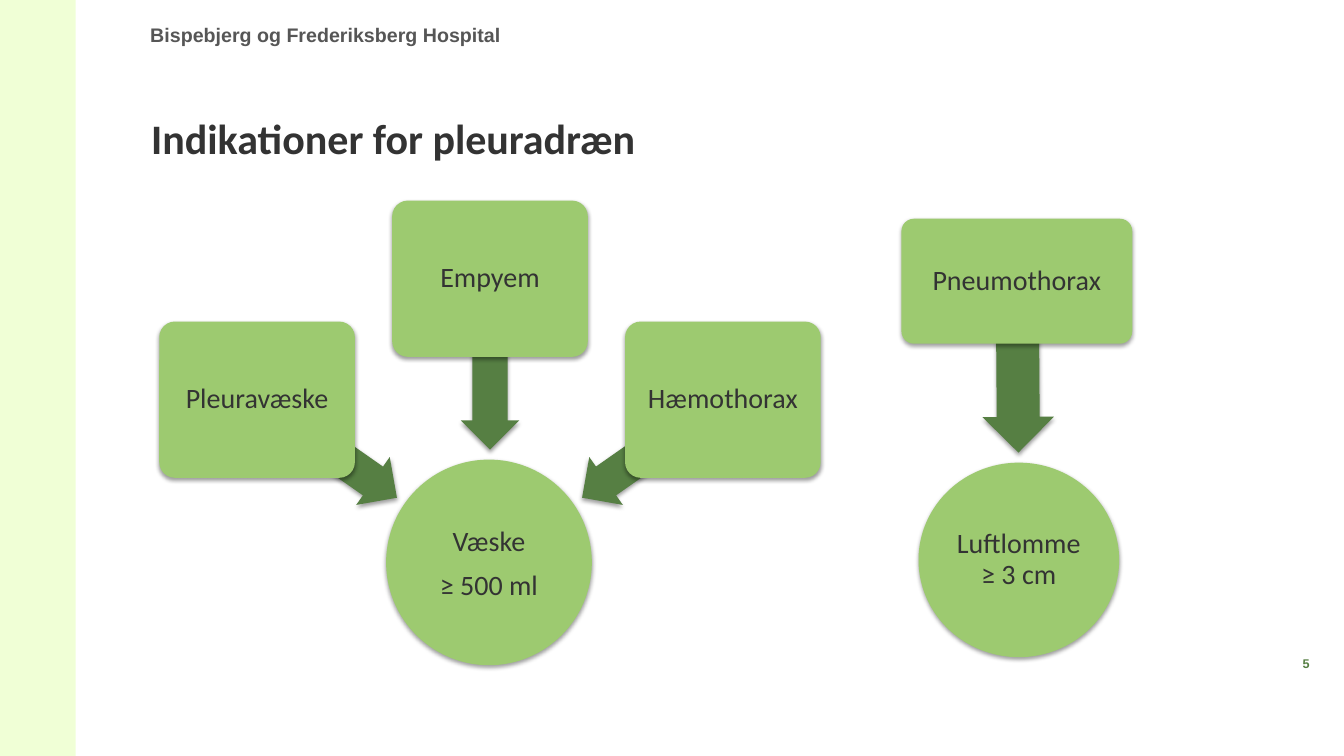
from dataclasses import dataclass

from lxml import etree
from pptx import Presentation
from pptx.dml.color import RGBColor
from pptx.enum.shapes import MSO_SHAPE
from pptx.enum.text import MSO_ANCHOR, PP_ALIGN
from pptx.oxml.ns import qn
from pptx.util import Inches, Pt

RECT, OVAL = MSO_SHAPE.RECTANGLE, MSO_SHAPE.OVAL
ROUNDED, ARROW = MSO_SHAPE.ROUNDED_RECTANGLE, MSO_SHAPE.LEFT_ARROW
LEFT, CENTER = PP_ALIGN.LEFT, PP_ALIGN.CENTER
TOP, MIDDLE, BOTTOM = MSO_ANCHOR.TOP, MSO_ANCHOR.MIDDLE, MSO_ANCHOR.BOTTOM

PALE_GREEN = RGBColor(0xF0, 0xFF, 0xD6)
GREEN = RGBColor(0x9D, 0xCA, 0x70)
DARK_GREEN = RGBColor(0x56, 0x7F, 0x43)
INK = RGBColor(0x33, 0x33, 0x33)
GRAY = RGBColor(0x56, 0x56, 0x56)


@dataclass
class Arrow:
    left: float
    top: float
    width: float
    height: float
    rotation: float


@dataclass
class Cause:
    text: str
    left: float
    top: float
    width: float
    height: float
    arrow: Arrow


@dataclass
class Threshold:
    lines: list[str]
    left: float
    top: float
    width: float
    height: float
    line_spacing: float
    causes: list[Cause]


THRESHOLDS = [
    Threshold(["Væske", "≥ 500 ml"], 3.83, 4.56, 2.04, 2.04, 1.0, [
        Cause("Pleuravæske", 1.58, 3.19, 1.94, 1.55, Arrow(2.39, 4.16, 1.7, 0.58, 215)),
        Cause("Empyem", 3.89, 1.99, 1.94, 1.55, Arrow(4.01, 3.32, 1.7, 0.58, 270)),
        Cause("Hæmothorax", 6.2, 3.19, 1.94, 1.55, Arrow(5.62, 4.16, 1.7, 0.58, 325)),
    ]),
    Threshold(["Luftlomme ≥ 3 cm"], 9.11, 4.59, 1.99, 1.93, 0.9, [
        Cause("Pneumothorax", 8.94, 2.17, 2.29, 1.24, Arrow(9.24, 3.28, 1.71, 0.71, 269.6)),
    ]),
]


def add_shadow(sp) -> None:
    """Soft shadow straight below the shape."""
    effects = sp._element.spPr.find(qn("a:effectLst"))
    shadow = etree.SubElement(effects, qn("a:outerShdw"), blurRad=str(Pt(3.1)),
                              dist=str(Pt(1.6)), dir="5400000", rotWithShape="0")
    color = etree.SubElement(shadow, qn("a:srgbClr"), val="000000")
    etree.SubElement(color, qn("a:alpha"), val="38000")


def add_figure(s, kind, left: float, top: float, width: float, height: float,
               fill: RGBColor, shadow: bool = True):
    sp = s.shapes.add_shape(kind, Inches(left), Inches(top), Inches(width), Inches(height))
    sp.shadow.inherit = False
    sp.fill.solid()
    sp.fill.fore_color.rgb = fill
    sp.line.fill.background()
    if shadow:
        add_shadow(sp)
    return sp


def write(sp, lines: list[str], *, size: float = 20, font: str = "Calibri",
          color: RGBColor = INK, bold: bool = False, align=CENTER, anchor=MIDDLE,
          inset: float = 0, line_spacing: float = 1.0, gap: float = 0) -> None:
    tf = sp.text_frame
    tf.word_wrap = True
    tf.vertical_anchor = anchor
    tf.margin_left = tf.margin_right = tf.margin_top = tf.margin_bottom = Inches(inset)
    for i, line in enumerate(lines):
        p = tf.paragraphs[0] if i == 0 else tf.add_paragraph()
        p.alignment = align
        p.line_spacing = line_spacing
        p.space_after = Pt(gap)
        r = p.add_run()
        r.text = line
        r.font.size, r.font.name, r.font.bold = Pt(size), font, bold
        r.font.color.rgb = color


def add_label(s, text: str, left: float, top: float, width: float, height: float,
              **text_format) -> None:
    sp = s.shapes.add_textbox(Inches(left), Inches(top), Inches(width), Inches(height))
    write(sp, [text], **text_format)


def add_cause(s, cause: Cause) -> None:
    a = cause.arrow
    sp = add_figure(s, ARROW, a.left, a.top, a.width, a.height, DARK_GREEN)
    sp.adjustments[0], sp.adjustments[1] = 0.6, 0.5
    sp.rotation = a.rotation
    sp = add_figure(s, ROUNDED, cause.left, cause.top, cause.width, cause.height, GREEN)
    sp.adjustments[0] = 0.1
    write(sp, [cause.text], inset=0.04, line_spacing=0.9, gap=7)


def add_threshold(s, t: Threshold) -> None:
    sp = add_figure(s, OVAL, t.left, t.top, t.width, t.height, GREEN)
    write(sp, t.lines, inset=0.01, line_spacing=t.line_spacing, gap=7)
    for cause in t.causes:
        add_cause(s, cause)


def main() -> None:
    prs = Presentation()
    prs.slide_width, prs.slide_height = Inches(13.33), Inches(7.5)
    s = prs.slides.add_slide(prs.slide_layouts[6])

    # Side band, header and title
    add_figure(s, RECT, 0, 0, 0.75, 7.5, PALE_GREEN, shadow=False)
    add_label(s, "Bispebjerg og Frederiksberg Hospital", 1.49, 0.23, 6.69, 0.24, size=14,
              font="Arial", color=GRAY, bold=True, align=LEFT, anchor=TOP)
    add_label(s, "Indikationer for pleuradræn", 1.5, 0.71, 11.09, 0.91, size=30,
              bold=True, align=LEFT, anchor=BOTTOM, line_spacing=0.85)

    # Slide number
    add_label(s, "5", 12.58, 6.51, 0.75, 0.2, size=9, font="Arial",
              color=DARK_GREEN, bold=True, anchor=TOP)

    # Causes pointing to their drainage thresholds
    for threshold in THRESHOLDS:
        add_threshold(s, threshold)

    prs.save("out.pptx")


if __name__ == "__main__":
    main()
